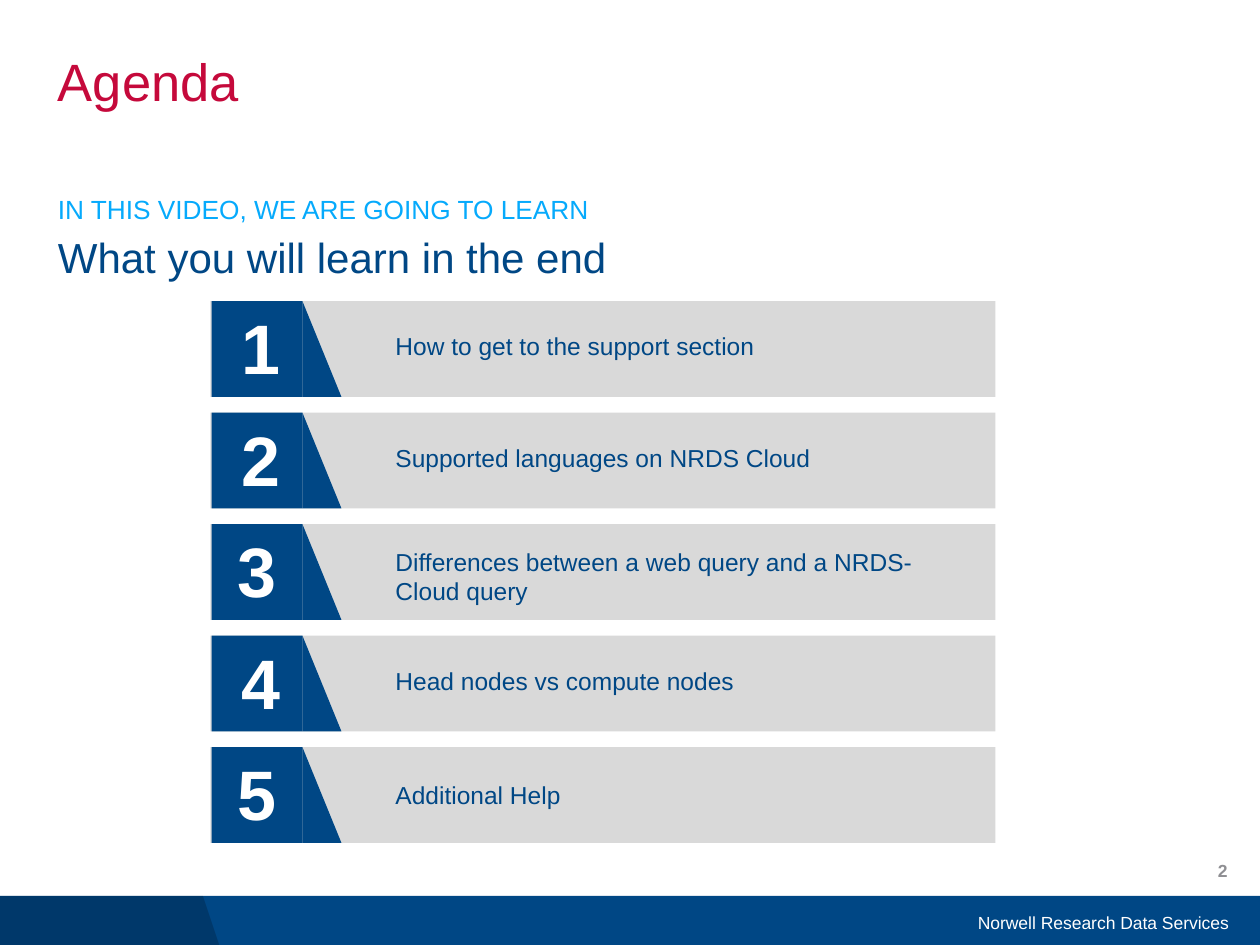
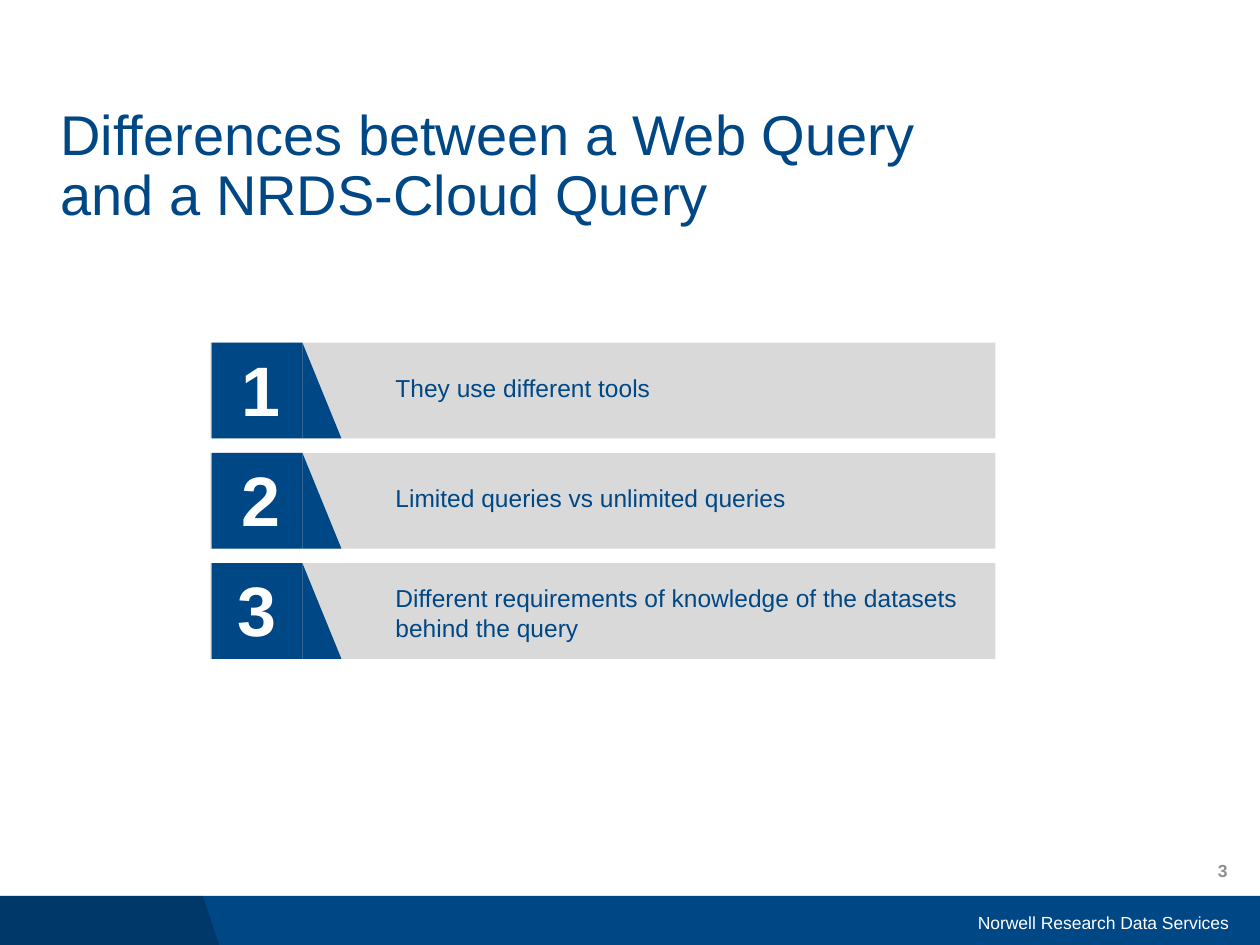
from dataclasses import dataclass
from itertools import cycle

from lxml import etree
from pptx import Presentation
from pptx.dml.color import RGBColor
from pptx.enum.shapes import MSO_SHAPE
from pptx.enum.text import MSO_ANCHOR, PP_ALIGN
from pptx.oxml.ns import qn
from pptx.util import Inches, Pt

RECTANGLE, SLANT = MSO_SHAPE.RECTANGLE, MSO_SHAPE.ISOSCELES_TRIANGLE
LEFT, RIGHT = PP_ALIGN.LEFT, PP_ALIGN.RIGHT
TOP, MIDDLE = MSO_ANCHOR.TOP, MSO_ANCHOR.MIDDLE


@dataclass(frozen=True)
class Theme:
    font: str = "Arial"
    navy: str = "004785"
    red: str = "C5093B"
    sky: str = "06AAFC"
    bar: str = "D9D9D9"
    gray: str = "8F8F93"
    white: str = "FFFFFF"
    black: str = "000000"
    agenda_title: int = 30
    topic_title: int = 32
    kicker: int = 15
    heading: int = 24
    number: int = 40
    label: int = 14
    footer: int = 10


theme = Theme()

# Grid: 100 columns by 75 rows of square cells
COLUMNS, ROWS = 100, 75
CELL = Inches(0.1)
BAND_TOP, BAND_HEIGHT = 71.1, 4.2
BAR_LEFT, BAR_WIDTH, BAR_HEIGHT = 16.7, 62.3, 7.6
TILE_LEFT, TILE_WIDTH, SLANT_WIDTH = 16.8, 7.2, 3.1
LABEL_LEFT, LABEL_WIDTH = 30.4, 47.2


def write(shapes, text, area, *, styles, bold=False, align=LEFT, anchor=TOP,
          spacing=None, side_inset=1):
    """Add one paragraph; each line takes the next (size, colour) style."""
    box = shapes.add_textbox(*(round(cells * CELL) for cells in area))
    frame = box.text_frame
    frame.word_wrap = True
    frame.vertical_anchor = anchor
    frame.margin_left = frame.margin_right = round(side_inset * CELL)
    para = frame.paragraphs[0]
    para.alignment = align
    if spacing:
        para.line_spacing = spacing
    for index, (line, (size, color)) in enumerate(zip(text.split("\n"), cycle(styles))):
        if index:
            para.add_line_break()
        span = para.add_run()
        span.text = line
        span.font.name = theme.font
        span.font.size = Pt(size)
        span.font.bold = bold
        span.font.color.rgb = RGBColor.from_string(color)


def draw(shapes, kind, area, color):
    shape = shapes.add_shape(kind, *(round(cells * CELL) for cells in area))
    shape.shadow.inherit = False
    shape.fill.solid()
    shape.fill.fore_color.rgb = RGBColor.from_string(color)
    shape.line.fill.background()
    return shape


# Content: each item is its label, number column and label drop below the bar top
pages = [
    dict(
        title="Agenda",
        title_area=(4.6, 4, 86.2, 5.6),
        title_style=(theme.agenda_title, theme.red),
        intro="IN THIS VIDEO, WE ARE GOING TO LEARN\nWhat you will learn in the end",
        first_bar=23.9,
        last_bar=59.3,
        items=[
            ("How to get to the support section", 18.2, 1.9),
            ("Supported languages on NRDS Cloud", 18.2, 1.9),
            ("Differences between a web query and a NRDS-Cloud query", 17.9, 1.3),
            ("Head nodes vs compute nodes", 18.2, 1.9),
            ("Additional Help", 17.9, 2.1),
        ],
    ),
    dict(
        title="Differences between a Web Query\nand a NRDS-Cloud Query",
        title_area=(4.8, 8, 86.2, 10.7),
        title_style=(theme.topic_title, theme.navy),
        intro=None,
        first_bar=27.2,
        last_bar=44.7,
        items=[
            ("They use different tools", 18.2, 1.9),
            ("Limited queries vs unlimited queries", 18.2, 1.9),
            ("Different requirements of knowledge of the datasets behind the query", 17.9, 1.1),
        ],
    ),
]

deck = Presentation()
deck.slide_width, deck.slide_height = COLUMNS * CELL, ROWS * CELL

for page_number, page in enumerate(pages, start=2):
    slide = deck.slides.add_slide(deck.slide_layouts[6])
    shapes = slide.shapes

    # Footer band with its darker corner
    draw(shapes, RECTANGLE, (0, BAND_TOP, COLUMNS, BAND_HEIGHT), theme.navy)
    band_bottom = BAND_TOP + BAND_HEIGHT
    outline = shapes.build_freeform(0, round(BAND_TOP * CELL))
    corner_points = [(16.1, BAND_TOP), (17.5, band_bottom), (0, band_bottom)]
    outline.add_line_segments([(round(x * CELL), round(y * CELL)) for x, y in corner_points])
    corner = outline.convert_to_shape()
    corner.shadow.inherit = False
    corner.line.fill.background()
    corner.fill.solid()
    corner.fill.fore_color.rgb = RGBColor.from_string(theme.black)
    shade = corner.fill._xPr.find(qn("a:solidFill"))[0]
    etree.SubElement(shade, qn("a:alpha"), val="20000")

    # Title and introduction
    write(shapes, page["title"], page["title_area"], styles=[page["title_style"]],
          spacing=0.9, side_inset=0)
    if page["intro"]:
        write(shapes, page["intro"], (4.6, 14.5, 86.2, 8.1),
              styles=[(theme.kicker, theme.sky), (theme.heading, theme.navy)],
              spacing=1.13, side_inset=0)

    # Footer text and page number
    write(shapes, "Norwell Research Data Services", (64.7, 71.2, 33.8, 4),
          styles=[(theme.footer, theme.white)], align=RIGHT, anchor=MIDDLE)
    write(shapes, str(page_number), (75.9, 67.1, 22.5, 4),
          styles=[(theme.footer, theme.gray)], bold=True, align=RIGHT, anchor=MIDDLE)

    # Evenly spaced numbered bars
    pitch = (page["last_bar"] - page["first_bar"]) / (len(page["items"]) - 1)
    for index, (label, number_left, label_drop) in enumerate(page["items"]):
        top = page["first_bar"] + index * pitch
        parts = shapes.add_group_shape().shapes
        draw(parts, RECTANGLE, (BAR_LEFT, top, BAR_WIDTH, BAR_HEIGHT), theme.bar)
        draw(parts, RECTANGLE, (TILE_LEFT, top, TILE_WIDTH, BAR_HEIGHT), theme.navy)
        slant = draw(parts, SLANT, (TILE_LEFT + TILE_WIDTH, top, SLANT_WIDTH, BAR_HEIGHT),
                     theme.navy)
        slant.adjustments[0] = 0
        write(parts, str(index + 1), (number_left, top - 0.2, 5.9, 7.7),
              styles=[(theme.number, theme.white)], bold=True)
        write(parts, label, (LABEL_LEFT, top + label_drop, LABEL_WIDTH, 3.4),
              styles=[(theme.label, theme.navy)])

deck.save("out.pptx")
